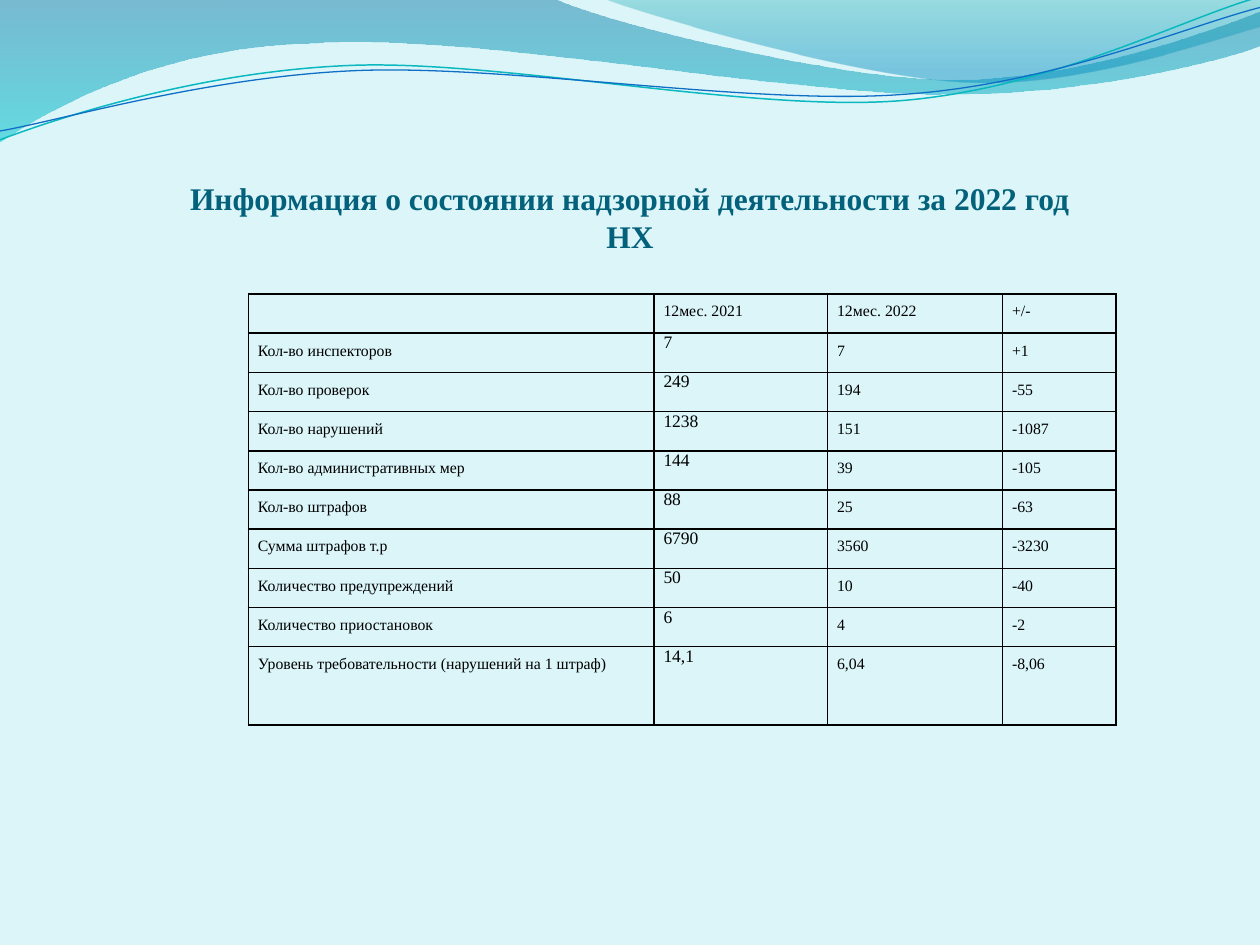
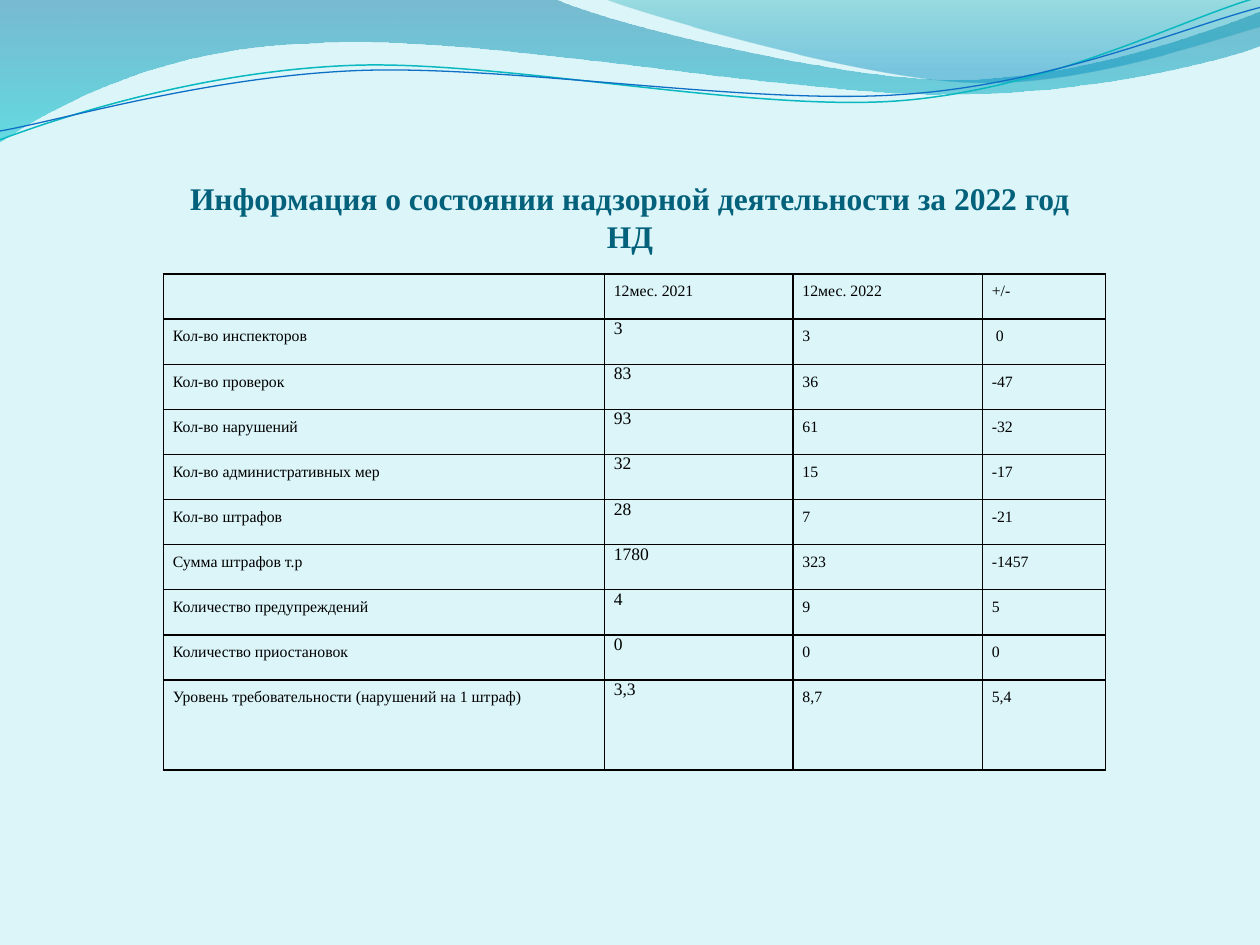
"""Build two slides of supervision figures under a shared wave header."""
from lxml.etree import SubElement
from pptx import Presentation
from pptx.dml.color import RGBColor
from pptx.enum.text import MSO_ANCHOR, PP_ALIGN
from pptx.oxml import parse_xml
from pptx.oxml.ns import nsdecls, qn
from pptx.util import Pt


def colour(value):
    return RGBColor.from_string(value)


def assign(target, values):
    for name, value in values.items():
        setattr(target, name, value)


BACKGROUND, TITLE_COLOUR, INK = "DBF5F9", "04617B", "000000"
FACE = "Times New Roman"

TITLE_FRAME = {"word_wrap": True, "vertical_anchor": MSO_ANCHOR.BOTTOM, "margin_left": 0,
               "margin_top": Pt(3.6), "margin_right": 0, "margin_bottom": 0}
TITLE_FONT = {"name": FACE, "size": Pt(18), "bold": True}
CELL_MARGINS = {"margin_left": Pt(5.4), "margin_top": 0, "margin_right": Pt(5.4), "margin_bottom": 0}
CELL_FONT = {"name": FACE, "size": Pt(9)}
PRIOR_YEAR_FONT = {"name": FACE, "size": Pt(10)}
JUSTIFIED = {"alignment": PP_ALIGN.JUSTIFY, "line_spacing": 1.5}
LEFT = {"alignment": PP_ALIGN.LEFT, "line_spacing": 1.5}
PRIOR_YEAR = {"alignment": PP_ALIGN.LEFT}

waves = [
    {"start": (0, 0),
     "segments": [(316.8, -0.7), (342.7, 12.2, 478.1, 45.4, 545.8, 45.4),
                  (614.2, 45.4, 689.8, 18.7, 720, 6.5), (720.7, 25.9),
                  (707.8, 31.7, 626.4, 54.7, 537.1, 54), (447.8, 54, 275, 20.2, 185, 24.5),
                  (92.9, 25.9, 33.1, 59.8, -0.7, 81.4), (0, 0)],
     "stops": [(0, "0074A1", 45), (1, "00C6CF", 55)]},
    {"start": (344.9, -0.7),
     "segments": [(366.5, 7.9, 491, 44.6, 553.7, 46.8), (616.3, 49.7, 691.9, 23, 720, 15.1),
                  (720, 0), (344.9, -0.7)],
     "stops": [(0, "00A1A9", 30), (0.8, "008BBF", 45)]},
    {"start": (-1.4, 62.9),
     "segments": [(33.7, 51.6, 114, 29.4, 199.8, 29.9), (284.8, 30.3, 425.8, 67.2, 512.4, 64.9),
                  (599, 62.4, 676.4, 25.7, 720.1, 15.6)],
     "line": ("0AB8BF", 0.85)},
    {"start": (-1.2, 57.9),
     "segments": [(33, 53.7, 118.3, 32.5, 204, 33), (290.5, 33.5, 428.9, 63.8, 515.5, 61.3),
                  (601.3, 59.6, 678.5, 30.1, 721.4, 21.3)],
     "line": ("0F6FC6", 0.75)},
]

indicators = ["", "Кол-во инспекторов", "Кол-во проверок", "Кол-во нарушений",
              "Кол-во административных мер", "Кол-во штрафов", "Сумма штрафов т.р",
              "Количество предупреждений", "Количество приостановок",
              "Уровень требовательности (нарушений на 1 штраф)"]
header = ("12мес. 2021", "12мес. 2022", "+/-")

reports = [
    {"unit": "НХ", "left": 142, "top": 168, "row_height": 22.4, "widths": (231.8, 99.2, 100, 64.8),
     "figures": [("7", "7", "+1"), ("249", "194", "-55"), ("1238", "151", "-1087"),
                 ("144", "39", "-105"), ("88", "25", "-63"), ("6790", "3560", "-3230"),
                 ("50", "10", "-40"), ("6", "4", "-2"), ("14,1", "6,04", "-8,06")]},
    {"unit": "НД", "left": 93.4, "top": 156.6, "row_height": 25.78, "widths": (252, 107.8, 108.2, 70.4),
     "figures": [("3", "3", " 0"), ("83", "36", "-47"), ("93", "61", "-32"),
                 ("32", "15", "-17"), ("28", "7", "-21"), ("1780", "323", "-1457"),
                 ("4", "9", "5"), ("0", "0", "0"), ("3,3", "8,7", "5,4")]},
]

deck = Presentation()
assign(deck, {"slide_width": Pt(720), "slide_height": Pt(540)})

for report in reports:
    slide = deck.slides.add_slide(deck.slide_layouts[6])
    slide.background.fill.solid()
    slide.background.fill.fore_color.rgb = colour(BACKGROUND)

    for wave in waves:
        points = [(Pt(x), Pt(y)) for segment in wave["segments"]
                  for x, y in zip(segment[::2], segment[1::2])]
        start_x, start_y = wave["start"]
        builder = slide.shapes.build_freeform(Pt(start_x), Pt(start_y))
        builder.add_line_segments(points, close="stops" in wave)
        ribbon = builder.convert_to_shape()
        ribbon.shadow.inherit = False

        steps = iter(list(ribbon.element.iter(qn("a:lnTo"))))
        for segment in wave["segments"]:
            knots = [next(steps) for _ in segment[::2]]
            if len(knots) == 3:
                curve = parse_xml(f"<a:cubicBezTo {nsdecls('a')}/>")
                knots[0].addprevious(curve)
                for knot in knots:
                    curve.append(knot[0])
                    knot.getparent().remove(knot)

        if "stops" in wave:
            ribbon.line.fill.background()
            ribbon.fill.gradient()
            ribbon.fill.gradient_angle = 270
            for stop, (position, shade, _) in zip(ribbon.fill.gradient_stops, wave["stops"]):
                stop.position = position
                stop.color.rgb = colour(shade)
            for shade, (_, _, opacity) in zip(ribbon.element.iter(qn("a:srgbClr")), wave["stops"]):
                SubElement(shade, qn("a:alpha"), val=str(opacity * 1000))
        else:
            ribbon.rotation = 357.3
            ribbon.fill.background()
            ribbon.line.color.rgb = colour(wave["line"][0])
            ribbon.line.width = Pt(wave["line"][1])

    heading = slide.shapes.add_textbox(Pt(36), Pt(55.4), Pt(648), Pt(90)).text_frame
    assign(heading, TITLE_FRAME)
    heading.text = f"Информация о состоянии надзорной деятельности за 2022 год\v{report['unit']}"
    heading.paragraphs[0].alignment = PP_ALIGN.CENTER
    for run in heading.paragraphs[0].runs:
        assign(run.font, TITLE_FONT)
        run.font.color.rgb = colour(TITLE_COLOUR)

    row_height = report["row_height"]
    comparison = slide.shapes.add_table(
        len(indicators), len(report["widths"]), Pt(report["left"]), Pt(report["top"]),
        Pt(sum(report["widths"])), Pt(row_height * (len(indicators) + 1))).table
    assign(comparison, {"first_row": False, "horz_banding": False})
    for column, width in zip(comparison.columns, report["widths"]):
        column.width = Pt(width)
    for row in comparison.rows:
        row.height = Pt(row_height)
    comparison.rows[len(indicators) - 1].height = Pt(2 * row_height)

    for r, (indicator, values) in enumerate(zip(indicators, [header] + report["figures"])):
        for c, value in enumerate((indicator, *values)):
            cell = comparison.cell(r, c)
            assign(cell, CELL_MARGINS)
            prior_year = c == 1 and r > 0
            ragged = c == 2 and r > 6 or value.startswith(" ")
            paragraph = cell.text_frame.paragraphs[0]
            assign(paragraph, PRIOR_YEAR if prior_year else LEFT if ragged else JUSTIFIED)
            if value:
                run = paragraph.add_run()
                run.text = value
                assign(run.font, PRIOR_YEAR_FONT if prior_year else CELL_FONT)
                run.font.color.rgb = colour(INK)
            else:
                SubElement(paragraph._p, qn("a:endParaRPr"), sz="900")
            properties = cell._tc.get_or_add_tcPr()
            for side in ("a:lnL", "a:lnR", "a:lnT", "a:lnB"):
                border = SubElement(properties, qn(side), w=str(Pt(1)))
                SubElement(SubElement(border, qn("a:solidFill")), qn("a:srgbClr"), val=INK)
            cell.fill.background()

deck.save("out.pptx")
